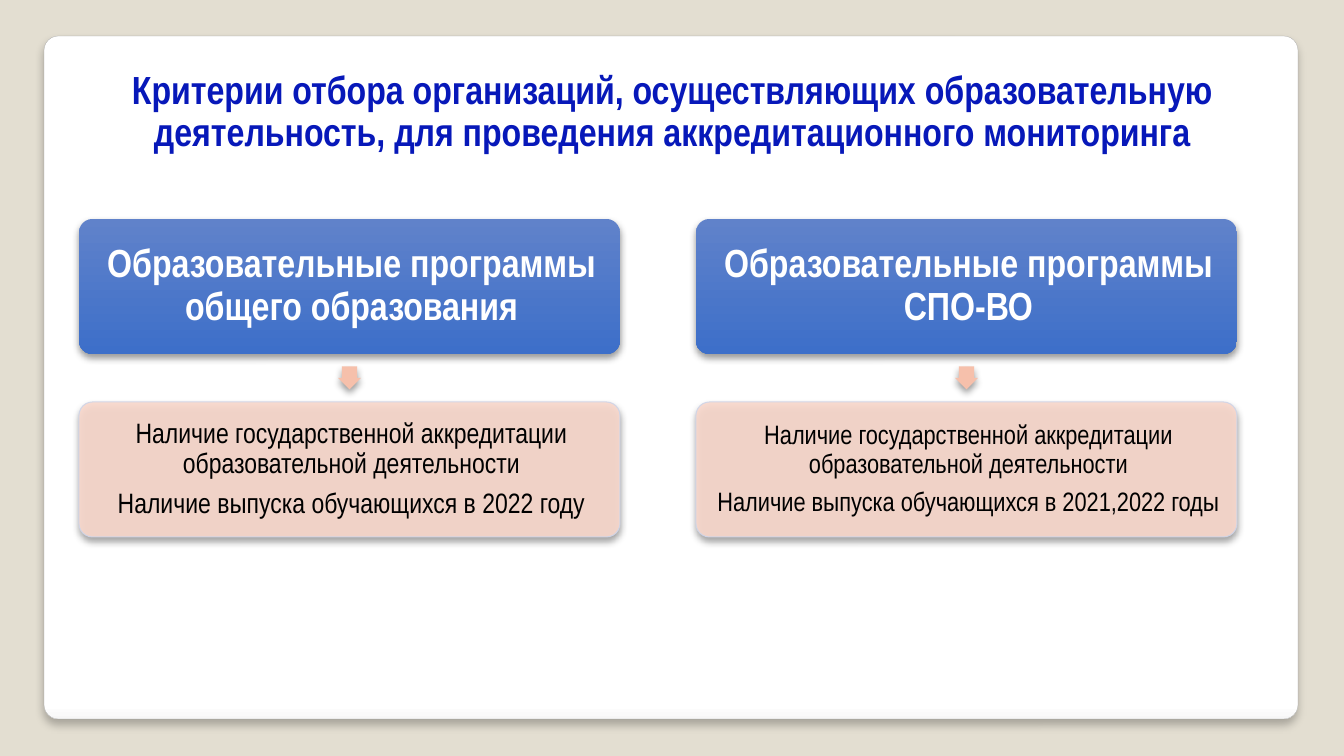
from lxml import etree
from pptx import Presentation
from pptx.dml.color import RGBColor
from pptx.enum.shapes import MSO_SHAPE as Shape
from pptx.enum.text import MSO_ANCHOR as Anchor, PP_ALIGN as Align
from pptx.oxml.ns import qn
from pptx.util import Pt

PX = 914400 / 100.8
FONT = "Arial Narrow"
SAND = RGBColor(0xE3, 0xDE, 0xD1)
WHITE = RGBColor(0xFF, 0xFF, 0xFF)
OFF_WHITE = RGBColor(0xF7, 0xF7, 0xF7)
GREY = RGBColor(0xA4, 0xA4, 0xA3)
BLACK = RGBColor(0, 0, 0)
NAVY = RGBColor(0x07, 0x18, 0xB9)
BLUE_TOP = RGBColor(0x60, 0x82, 0xCA)
BLUE_BOTTOM = RGBColor(0x3D, 0x6F, 0xC9)
ARROW_PEACH = RGBColor(0xF6, 0xC0, 0xAB)
PALE_PEACH = RGBColor(0xF9, 0xD8, 0xCC)
PALE_BLUE = RGBColor(0xCF, 0xD5, 0xE9)

TITLE = ("Критерии отбора организаций, осуществляющих образовательную "
         "деятельность, для проведения аккредитационного мониторинга")
ACCREDITATION = "Наличие государственной аккредитации образовательной деятельности"
COLUMNS = [
    ("Образовательные программы общего образования",
     [ACCREDITATION, "Наличие выпуска обучающихся в 2022 году"], 20, 7),
    ("Образовательные программы СПО-ВО",
     [ACCREDITATION, "Наличие выпуска обучающихся в 2021,2022 годы"], 19, 6.7),
]


def emu(*lengths):
    return [round(length * PX) for length in lengths]


def add_shadow(shape, opacity, blur, distance):
    effects = shape._element.spPr.find(qn("a:effectLst"))
    shadow = etree.SubElement(
        effects, qn("a:outerShdw"), blurRad=str(Pt(blur)), dist=str(Pt(distance)),
        dir="5400000", algn="ctr", rotWithShape="0")
    color = etree.SubElement(shadow, qn("a:srgbClr"), val=str(BLACK))
    etree.SubElement(color, qn("a:alpha"), val=str(opacity * 1000))


def add_block(page, kind, box, adjustments, opacity=40, blur=5.2, distance=3):
    shape = page.shapes.add_shape(kind, *emu(*box))
    for index, value in enumerate(adjustments):
        shape.adjustments[index] = value
    shape.line.fill.background()
    shape.shadow.inherit = False
    add_shadow(shape, opacity, blur, distance)
    return shape


def fill_gradient(shape, first, last, start=0):
    shape.fill.gradient()
    shape.fill.gradient_angle = 270
    stops = shape.fill.gradient_stops
    for stop, color, position in zip(stops, (first, last), (start, 1)):
        stop.color.rgb = color
        stop.position = position


def make_translucent(fill, percent):
    color = fill._xPr.find(qn("a:solidFill"))[0]
    etree.SubElement(color, qn("a:alpha"), val=str(percent * 1000))


def write(shape, texts, size, color, bold=False, insets=(10, 5, 10, 5), after=0):
    frame = shape.text_frame
    frame.word_wrap = True
    frame.vertical_anchor = Anchor.MIDDLE
    (frame.margin_left, frame.margin_top,
     frame.margin_right, frame.margin_bottom) = emu(*insets)
    for index, text in enumerate(texts):
        para = frame.add_paragraph() if index else frame.paragraphs[0]
        para.alignment = Align.CENTER
        para.line_spacing = 0.9
        para.space_after = Pt(after)
        span = para.add_run()
        span.text = text
        span.font.name = FONT
        span.font.size = Pt(size)
        span.font.bold = bold
        span.font.color.rgb = color


def add_card(page, box):
    card = add_block(page, Shape.ROUNDED_RECTANGLE, box, [0.021], 25, 6, 4)
    fill_gradient(card, WHITE, OFF_WHITE, 0.98)
    card.line.color.rgb = GREY
    card.line.width = Pt(0.16)


def add_title(page, box):
    title = page.shapes.add_textbox(*emu(*box))
    write(title, [TITLE], 28, NAVY, bold=True)


def add_column(page, box, heading, criteria, size, after):
    left, top, width, height = box
    block_height, arrow_size = 135, 23

    header = add_block(page, Shape.ROUNDED_RECTANGLE,
                       (left, top, width, block_height), [0.1])
    fill_gradient(header, BLUE_TOP, BLUE_BOTTOM)
    write(header, [heading], 28, WHITE, True, (8, 8, 4, 8), 11.2)

    arrow_left = left + (width - arrow_size) / 2
    arrow_top = top + (height - arrow_size) / 2
    arrow = add_block(page, Shape.RIGHT_ARROW,
                      (arrow_left, arrow_top, arrow_size, arrow_size), [0.667, 0.5])
    arrow.rotation = 90
    arrow.fill.solid()
    arrow.fill.fore_color.rgb = ARROW_PEACH

    panel = add_block(page, Shape.ROUNDED_RECTANGLE,
                      (left, top + height - block_height, width, block_height), [0.1])
    panel.fill.solid()
    panel.fill.fore_color.rgb = PALE_PEACH
    panel.line.color.rgb = PALE_BLUE
    panel.line.width = Pt(0.75)
    make_translucent(panel.fill, 90)
    make_translucent(panel.line.fill, 90)
    write(panel, criteria, size, BLACK, False, (7, 7, 3, 7), after)


def main():
    deck = Presentation()
    deck.slide_width, deck.slide_height = emu(1344, 756)
    page = deck.slides.add_slide(deck.slide_layouts[6])
    page.background.fill.solid()
    page.background.fill.fore_color.rgb = SAND
    add_card(page, (44, 36, 1254, 683))
    add_title(page, (45, 40, 1254, 146))
    for index, column in enumerate(COLUMNS):
        add_column(page, (79 + index * 617, 219, 541, 318), *column)
    deck.save("out.pptx")


if __name__ == "__main__":
    main()
